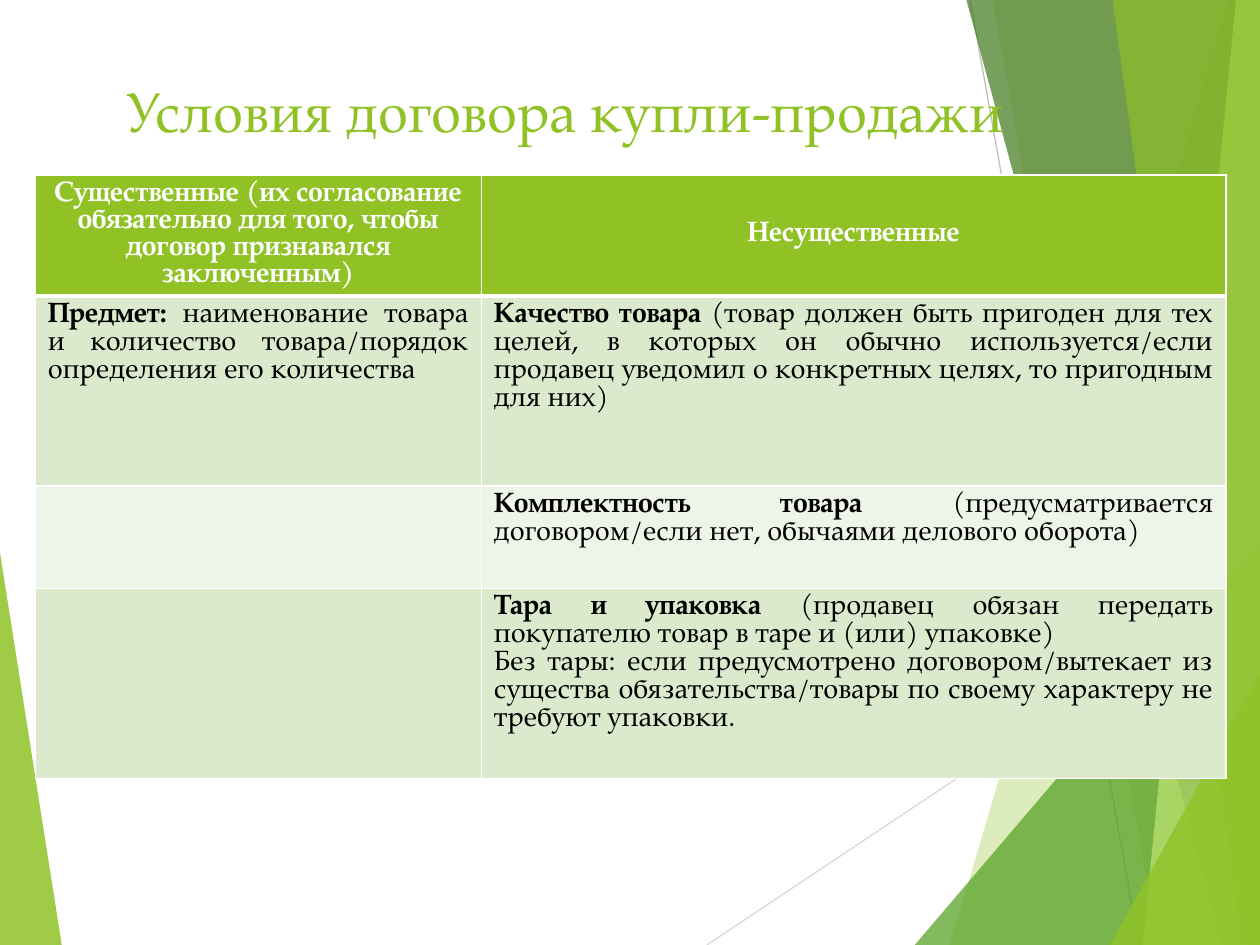
import dataclasses

import lxml.etree
import pptx
import pptx.dml.color
import pptx.enum.shapes
import pptx.enum.text
import pptx.oxml.ns
import pptx.util

WIDTH = pptx.util.Inches(10)
HEIGHT = pptx.util.Inches(7.5)
FONT = "TeX Gyre Pagella"
GREEN, WHITE, BLACK = "90C226", "FFFFFF", "000000"
BANDS = ("DBE9CD", "EEF4E8")
ALIGN = pptx.enum.text.PP_ALIGN
ANCHOR = pptx.enum.text.MSO_ANCHOR


@dataclasses.dataclass(frozen=True)
class Facet:
    color: str
    opacity: int
    corners: tuple[tuple[float, float], ...]


@dataclasses.dataclass(frozen=True)
class Ray:
    color: str
    start: tuple[float, float]
    end: tuple[float, float]


@dataclasses.dataclass(frozen=True)
class Clause:
    term: str
    detail: str


def right_facet(color: str, opacity: int, top: float, bottom: float) -> Facet:
    return Facet(color, opacity, ((top, 0), (bottom, 100), (100, 100), (100, 0)))


def corner_facet(color: str, opacity: int, left: float, top: float) -> Facet:
    return Facet(color, opacity, ((left, 100), (100, top), (100, 100)))


DECORATIONS = (
    Facet(GREEN, 85, ((0, 58.5), (4.9, 100), (0, 100))),
    Ray("D9D9D9", (56.1, 100), (100, 61)),
    Ray("BFBFBF", (77, 0), (90.4, 100)),
    right_facet(GREEN, 30, 97.5, 75.4),
    right_facet(GREEN, 20, 78.8, 91.9),
    corner_facet("54A021", 72, 72.6, 57.2),
    right_facet("3F7819", 70, 76.7, 97),
    right_facet("C0E474", 70, 98.1, 90.7),
    right_facet(GREEN, 65, 88.3, 98.6),
    corner_facet(GREEN, 80, 88.1, 71.3),
)

HEADINGS = (
    "Существенные (их согласование обязательно для того, чтобы договор признавался заключенным)",
    "Несущественные",
)
ROWS = (
    (
        (Clause("Предмет: ", "наименование товара и количество товара/порядок определения его количества"),),
        (Clause("Качество товара ", "(товар должен быть пригоден для тех целей, в которых он обычно "
                "используется/если продавец уведомил о конкретных целях, то пригодным для них)"),),
    ),
    (
        (),
        (Clause("Комплектность товара ", "(предусматривается договором/если нет, обычаями делового оборота)"),),
    ),
    (
        (),
        (
            Clause("Тара и упаковка ", "(продавец обязан передать покупателю товар в таре и (или) упаковке)"),
            Clause("", "Без тары: если предусмотрено договором/вытекает из существа обязательства/товары "
                   "по своему характеру не требуют упаковки."),
        ),
    ),
)
COLUMN_WIDTHS = (3.54, 5.91)
ROW_HEIGHTS = (0.95, 1.51, 0.81, 1.51)


def rgb(color: str) -> pptx.dml.color.RGBColor:
    return pptx.dml.color.RGBColor.from_string(color)


def across(percent: float) -> int:
    return round(WIDTH * percent / 100)


def down(percent: float) -> int:
    return round(HEIGHT * percent / 100)


def add_child(parent, tag: str, **attributes: str):
    return lxml.etree.SubElement(parent, pptx.oxml.ns.qn(tag), attributes)


def draw_facet(page, facet: Facet) -> None:
    points = [(across(x), down(y)) for x, y in facet.corners]
    builder = page.shapes.build_freeform(*points[0])
    builder.add_line_segments(points[1:], close=True)
    shape = builder.convert_to_shape()
    shape.shadow.inherit = False
    shape.line.fill.background()
    shape.fill.solid()
    shape.fill.fore_color.rgb = rgb(facet.color)
    color = shape.element.spPr.find(".//" + pptx.oxml.ns.qn("a:srgbClr"))
    add_child(color, "a:alpha", val=str(facet.opacity * 1000))


def draw_ray(page, ray: Ray) -> None:
    (x1, y1), (x2, y2) = ray.start, ray.end
    line = page.shapes.add_connector(
        pptx.enum.shapes.MSO_CONNECTOR.STRAIGHT, across(x1), down(y1), across(x2), down(y2))
    line.line.color.rgb = rgb(ray.color)
    line.line.width = pptx.util.Pt(0.75)
    add_child(line.element.spPr, "a:effectLst")


def style_paragraph(para, size: float, color: str, align, spacing: float) -> None:
    para.font.name = FONT
    para.font.size = pptx.util.Pt(size)
    para.font.color.rgb = rgb(color)
    para.alignment = align
    para.line_spacing = pptx.util.Pt(spacing)


def draw_title(page, text: str) -> None:
    box = page.shapes.add_textbox(across(9.1), down(7), across(90), down(9.4))
    box.text_frame.word_wrap = True
    box.text_frame.vertical_anchor = ANCHOR.MIDDLE
    para = box.text_frame.paragraphs[0]
    para.text = text
    style_paragraph(para, 32, GREEN, ALIGN.LEFT, 38)


def style_cell(cell, color: str, bottom_width: float) -> None:
    cell.fill.solid()
    cell.fill.fore_color.rgb = rgb(color)
    properties = cell._tc.get_or_add_tcPr()
    sides = (("L", 1), ("R", 1), ("T", 1), ("B", bottom_width))
    for position, (side, width) in enumerate(sides):
        border = add_child(properties, "a:ln" + side, w=str(pptx.util.Pt(width)))
        add_child(add_child(border, "a:solidFill"), "a:srgbClr", val=WHITE)
        properties.insert(position, border)


def fill_heading(cell, text: str) -> None:
    style_cell(cell, GREEN, 3)
    cell.vertical_anchor = ANCHOR.MIDDLE
    para = cell.text_frame.paragraphs[0]
    para.text = text
    style_paragraph(para, 16, WHITE, ALIGN.CENTER, 15.5)
    para.font.bold = True


def fill_clauses(cell, clauses: tuple[Clause, ...], color: str) -> None:
    style_cell(cell, color, 1)
    for index, clause in enumerate(clauses):
        frame = cell.text_frame
        para = frame.add_paragraph() if index else frame.paragraphs[0]
        style_paragraph(para, 16, BLACK, ALIGN.JUSTIFY, 16)
        for text, bold in ((clause.term, True), (clause.detail, False)):
            if text:
                span = para.add_run()
                span.text = text
                span.font.bold = bold


def draw_table(page) -> None:
    table = page.shapes.add_table(
        len(ROW_HEIGHTS), len(COLUMN_WIDTHS), across(2.8), down(18.5),
        pptx.util.Inches(sum(COLUMN_WIDTHS)), pptx.util.Inches(sum(ROW_HEIGHTS))).table
    for column, width in zip(table.columns, COLUMN_WIDTHS):
        column.width = pptx.util.Inches(width)
    for row, height in zip(table.rows, ROW_HEIGHTS):
        row.height = pptx.util.Inches(height)
    for column, heading in enumerate(HEADINGS):
        fill_heading(table.cell(0, column), heading)
    for row, cells in enumerate(ROWS):
        for column, clauses in enumerate(cells):
            fill_clauses(table.cell(row + 1, column), clauses, BANDS[row % 2])


def main() -> None:
    deck = pptx.Presentation()
    deck.slide_width, deck.slide_height = WIDTH, HEIGHT
    page = deck.slides.add_slide(deck.slide_layouts[6])
    for item in DECORATIONS:
        if isinstance(item, Facet):
            draw_facet(page, item)
        else:
            draw_ray(page, item)
    draw_title(page, "Условия договора купли-продажи")
    draw_table(page)
    deck.save("out.pptx")


if __name__ == "__main__":
    main()
